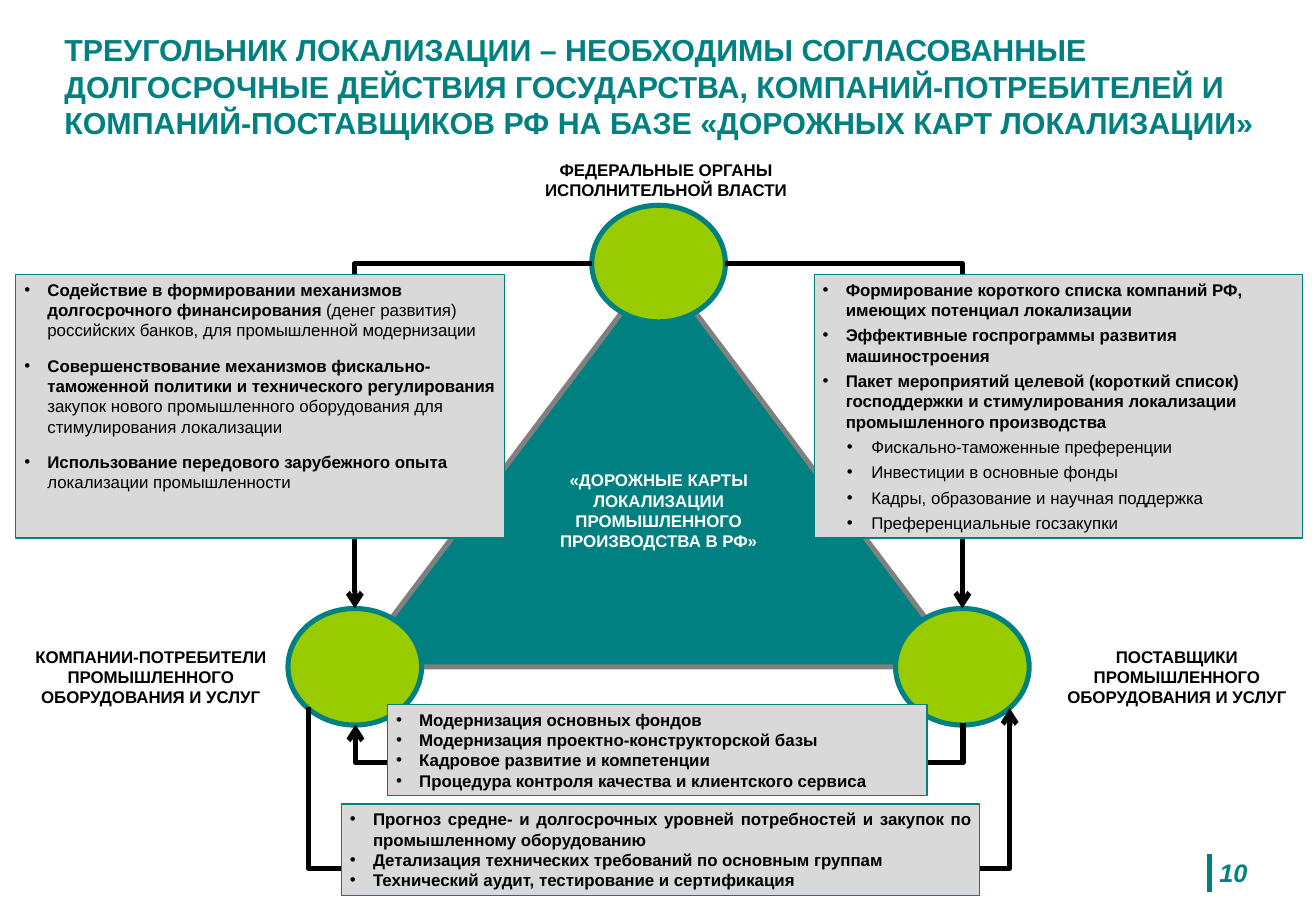
import pptx
import pptx.util
import pptx.dml.color
import pptx.enum.shapes
import pptx.enum.text
import pptx.oxml
import pptx.oxml.ns

RGB = pptx.dml.color.RGBColor
SHAPE = pptx.enum.shapes.MSO_SHAPE
LINK = pptx.enum.shapes.MSO_CONNECTOR
ALIGN = pptx.enum.text.PP_ALIGN
FIT = pptx.enum.text.MSO_AUTO_SIZE
qn = pptx.oxml.ns.qn

TEAL = RGB(0x00, 0x80, 0x80)
LIME = RGB(0x99, 0xCC, 0x00)
GREY = RGB(0x80, 0x80, 0x80)
PALE = RGB(0xD9, 0xD9, 0xD9)
BLACK = RGB(0, 0, 0)
WHITE = RGB(0xFF, 0xFF, 0xFF)
FONT = "Arial"
PX = 9144  # EMU in one px, 100 px to the inch

# Content
TITLE = ("ТРЕУГОЛЬНИК ЛОКАЛИЗАЦИИ – НЕОБХОДИМЫ СОГЛАСОВАННЫЕ ДОЛГОСРОЧНЫЕ "
         "ДЕЙСТВИЯ ГОСУДАРСТВА, КОМПАНИЙ-ПОТРЕБИТЕЛЕЙ И КОМПАНИЙ-ПОСТАВЩИКОВ "
         "РФ НА БАЗЕ «ДОРОЖНЫХ КАРТ ЛОКАЛИЗАЦИИ»")
LABELS = [  # text, box, colour
    ("ФЕДЕРАЛЬНЫЕ ОРГАНЫ ИСПОЛНИТЕЛЬНОЙ ВЛАСТИ", (426, 127, 244, 41), BLACK),
    ("ПОСТАВЩИКИ ПРОМЫШЛЕННОГО ОБОРУДОВАНИЯ И УСЛУГ",
     (865, 528, 207, 58), BLACK),
    ("КОМПАНИИ-ПОТРЕБИТЕЛИ ПРОМЫШЛЕННОГО ОБОРУДОВАНИЯ И УСЛУГ",
     (2, 528, 244, 58), BLACK),
    ("«ДОРОЖНЫЕ КАРТЫ ЛОКАЛИЗАЦИИ ПРОМЫШЛЕННОГО ПРОИЗВОДСТВА В РФ»",
     (420, 383, 244, 75), WHITE),
]
# Each point: level, bold words, plain words
STATE = [
    (0, "Формирование короткого списка компаний РФ, имеющих потенциал "
        "локализации", ""),
    (0, "Эффективные госпрограммы развития машиностроения", ""),
    (0, "Пакет мероприятий целевой (короткий список) господдержки и "
        "стимулирования локализации промышленного производства", ""),
    (1, "", "Фискально-таможенные преференции"),
    (1, "", "Инвестиции в основные фонды"),
    (1, "", "Кадры, образование и научная поддержка"),
    (1, "", "Преференциальные госзакупки"),
]
MONEY = [
    (0, "Содействие в формировании механизмов долгосрочного финансирования ",
     "(денег развития) российских банков, для промышленной модернизации"),
    (0, "Совершенствование механизмов фискально-таможенной политики и "
        "технического регулирования ",
     "закупок нового промышленного оборудования для стимулирования "
     "локализации"),
    (0, "Использование передового зарубежного опыта",
     " локализации промышленности"),
]
NEEDS = [
    (0, "Прогноз средне- и долгосрочных уровней потребностей и закупок по "
        "промышленному оборудованию", ""),
    (0, "Детализация технических требований по основным группам", ""),
    (0, "Технический аудит, тестирование и сертификация", ""),
]
SKILLS = [
    (0, "Модернизация основных фондов", ""),
    (0, "Модернизация проектно-конструкторской базы", ""),
    (0, "Кадровое развитие и компетенции", ""),
    (0, "Процедура контроля качества и клиентского сервиса", ""),
]
PANELS = [  # points, box, space after, alignment, sizing
    (STATE, (670, 226, 402, 217), 3, ALIGN.LEFT, FIT.NONE),
    (MONEY, (13, 226, 402, 217), 9, ALIGN.LEFT, FIT.NONE),
    (NEEDS, (281, 662, 525, 75), 0, ALIGN.JUSTIFY, FIT.SHAPE_TO_FIT_TEXT),
    (SKILLS, (319, 580, 444, 75), 0, ALIGN.JUSTIFY, FIT.SHAPE_TO_FIT_TEXT),
]
INDENT = [(19, -19), (40, -20)]  # left margin and hang by level
NODES = {"top": (487, 169), "left": (237, 501), "right": (737, 501)}
NODE_W, NODE_H = 110, 96
# From node and site, to node and site, box, turn, flip, preset, bend
ROUTES = [
    ("top", 6, "right", 0, (597, 217, 195, 284), 0, "", "bentConnector2", 0),
    ("top", 2, "left", 0, (292, 217, 195, 284), 180, "flipV",
     "bentConnector2", 0),
    ("right", 4, "left", 4, (542, 346, 1, 500), 90, "",
     "bentConnector3", 3293400),
    ("left", 3, "right", 5, (542, 294, 1, 577), 270, "flipH",
     "bentConnector3", 13497300),
]

deck = pptx.Presentation()
deck.slide_width, deck.slide_height = 1083 * PX, 750 * PX
slide = deck.slides.add_slide(deck.slide_layouts[5])
shapes = slide.shapes


def scale(box):
    return [n * PX for n in box]


def add_xml(parent, tag, **attrs):
    child = pptx.oxml.parse_xml(
        f'<{tag} xmlns:a="http://schemas.openxmlformats.org/drawingml/2006/main"/>')
    for key, val in attrs.items():
        child.set(key, str(val))
    parent.append(child)
    return child


def add_run(para, text, size, color, bold=True, slant=False):
    run = para.add_run()
    run.text = text
    font = run.font
    font.name, font.size, font.bold = FONT, pptx.util.Pt(size), bold
    font.italic = slant
    font.color.rgb = color


def set_frame(frame, pad_x, pad_y, fit):
    frame.word_wrap = True
    frame.auto_size = fit
    frame.vertical_anchor = pptx.enum.text.MSO_ANCHOR.TOP
    frame.margin_left = frame.margin_right = pad_x * PX
    frame.margin_top = frame.margin_bottom = pad_y * PX


def add_form(kind, box, fill, line, width):
    form = shapes.add_shape(kind, *scale(box))
    form.shadow.inherit = False
    form.fill.solid()
    form.fill.fore_color.rgb = fill
    form.line.color.rgb = line
    form.line.width = pptx.util.Pt(width)
    return form


def add_line(kind, box, color):
    x, y, w, h = scale(box)
    line = shapes.add_connector(kind, x, y, x + w, y + h)
    line.line.color.rgb = color
    line.line.width = pptx.util.Pt(3)
    add_xml(line._element.spPr, "a:effectLst")
    return line


def add_text(text, box, size, color, pad, fit, slant=False):
    frame = shapes.add_textbox(*scale(box)).text_frame
    set_frame(frame, *pad, fit)
    para = frame.paragraphs[0]
    para.alignment = ALIGN.CENTER
    add_run(para, text, size, color, slant=slant)


# Title
head = shapes.title
head.left, head.top, head.width, head.height = scale((43, 21, 1050, 83))
set_frame(head.text_frame, 10, 5, FIT.NONE)
para = head.text_frame.paragraphs[0]
para.alignment = ALIGN.LEFT
add_run(para, TITLE, 18, TEAL)

# Triangle and its corner nodes
add_line(LINK.STRAIGHT, (995, 703, 0, 31), TEAL)
add_form(SHAPE.ISOSCELES_TRIANGLE, (292, 217, 500, 332), TEAL, GREY, 3)
nodes = {name: add_form(SHAPE.OVAL, (*spot, NODE_W, NODE_H), LIME, TEAL, 3)
         for name, spot in NODES.items()}

# Labels
for text, box, color in LABELS:
    add_text(text, box, 10, color, (7, 4), FIT.SHAPE_TO_FIT_TEXT)

# Bent arrows glued to the nodes
for start, site, end, goal, box, turn, flip, preset, bend in ROUTES:
    route = add_line(LINK.ELBOW, box, BLACK)
    props = route._element.spPr
    frame = props.find(qn("a:xfrm"))
    frame.set("rot", str(turn * 60000))
    if flip:
        frame.set(flip, "1")
    geom = props.find(qn("a:prstGeom"))
    geom.set("prst", preset)
    if bend:
        add_xml(geom.find(qn("a:avLst")), "a:gd", name="adj1",
                fmla=f"val {bend}")
    add_xml(props.find(qn("a:ln")), "a:tailEnd", type="arrow")
    glue = route._element.find(qn("p:nvCxnSpPr")).find(qn("p:cNvCxnSpPr"))
    add_xml(glue, "a:stCxn", id=nodes[start].shape_id, idx=site)
    add_xml(glue, "a:endCxn", id=nodes[end].shape_id, idx=goal)

# Bulleted panels
for points, box, gap, align, fit in PANELS:
    frame = add_form(SHAPE.RECTANGLE, box, PALE, TEAL, 0.75).text_frame
    set_frame(frame, 7, 4, fit)
    for i, (level, strong, plain) in enumerate(points):
        para = frame.add_paragraph() if i else frame.paragraphs[0]
        props = para._p.get_or_add_pPr()
        left, hang = scale(INDENT[level])
        props.set("marL", str(left))
        props.set("indent", str(hang))
        add_xml(props, "a:buFont", typeface=FONT)
        add_xml(props, "a:buChar", char="•")
        para.level = level
        para.alignment = align
        para.space_after = pptx.util.Pt(gap)
        for text, bold in ((strong, True), (plain, False)):
            if text:
                add_run(para, text, 10, BLACK, bold)

# Page number
add_text("10", (971, 700, 88, 34), 15, TEAL, (12, 6), FIT.NONE, slant=True)

deck.save("out.pptx")
